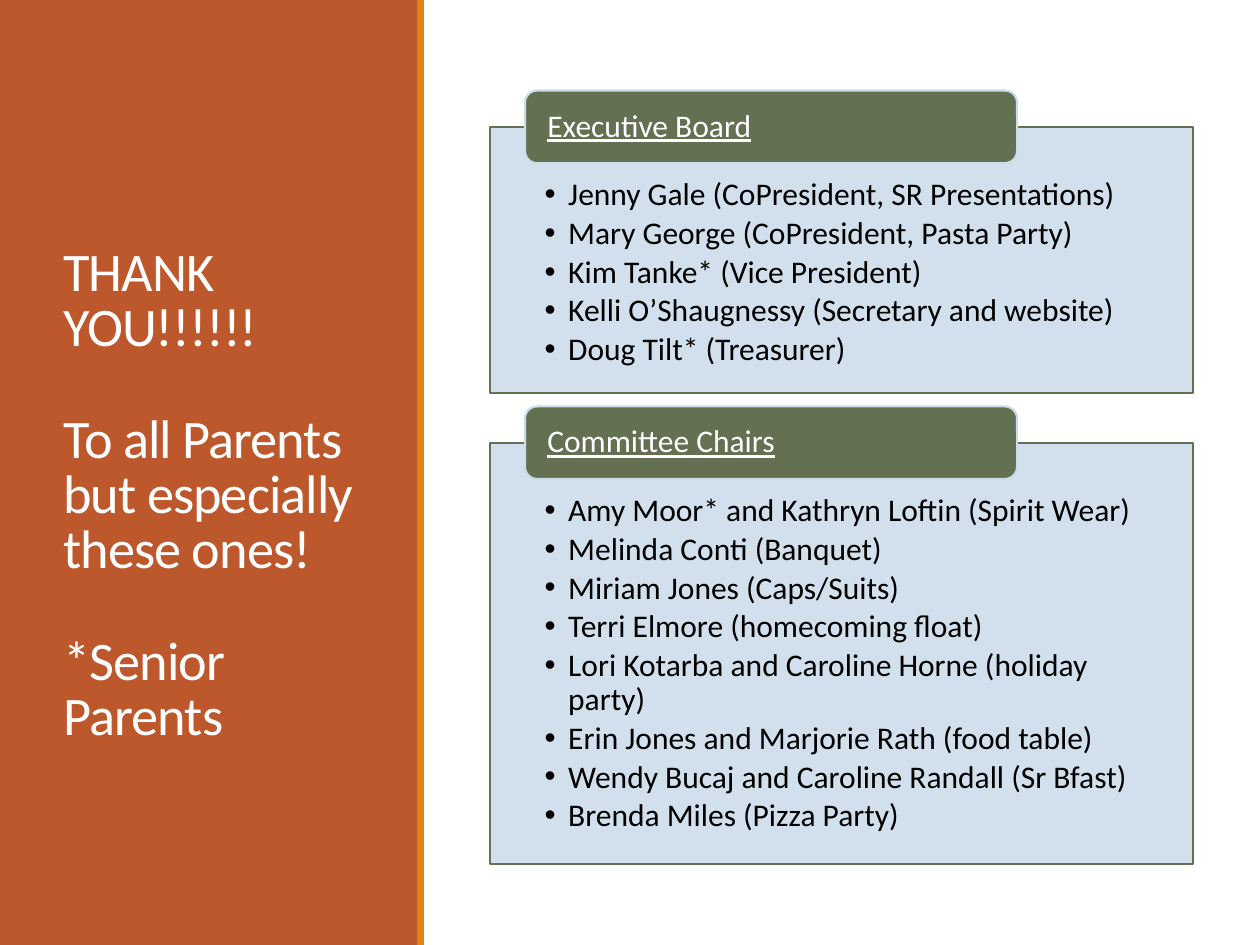
from lxml import etree
from pptx import Presentation
from pptx.dml.color import RGBColor
from pptx.enum.shapes import MSO_SHAPE
from pptx.enum.text import MSO_ANCHOR, MSO_AUTO_SIZE, PP_ALIGN
from pptx.oxml.ns import qn
from pptx.util import Pt

RECTANGLE, ROUNDED = MSO_SHAPE.RECTANGLE, MSO_SHAPE.ROUNDED_RECTANGLE
TOP, MIDDLE = MSO_ANCHOR.TOP, MSO_ANCHOR.MIDDLE
LEFT, NO_FIT = PP_ALIGN.LEFT, MSO_AUTO_SIZE.NONE

RUST, ORANGE, GREEN, BLUE = "BD582C", "E48312", "637052", "CCDDEA"
WHITE, BLACK = "FFFFFF", "000000"

MESSAGES = ["THANK YOU!!!!!!", "To all Parents but especially these ones!", "*Senior Parents"]
GROUPS = [
    ("Executive Board", 72.5, 152, [
        "Jenny Gale (CoPresident, SR Presentations)",
        "Mary George (CoPresident, Pasta Party)",
        "Kim Tanke* (Vice President)",
        "Kelli O’Shaugnessy (Secretary and website)",
        "Doug Tilt* (Treasurer)",
    ]),
    ("Committee Chairs", 253, 241, [
        "Amy Moor* and Kathryn Loftin (Spirit Wear)",
        "Melinda Conti (Banquet)",
        "Miriam Jones (Caps/Suits)",
        "Terri Elmore (homecoming float)",
        "Lori Kotarba and Caroline Horne (holiday party)",
        "Erin Jones and Marjorie Rath (food table)",
        "Wendy Bucaj and Caroline Randall (Sr Bfast)",
        "Brenda Miles (Pizza Party)",
    ]),
]


def add_block(kind, left, top, width, height, fill, line=None):
    block = page.shapes.add_shape(kind, Pt(left), Pt(top), Pt(width), Pt(height))
    block.shadow.inherit = False
    block.fill.solid()
    block.fill.fore_color.rgb = RGBColor.from_string(fill)
    if line:
        block.line.color.rgb = RGBColor.from_string(line)
        block.line.width = Pt(1.25)
    else:
        block.line.fill.background()
    return block


def write(para, text, size, color, spacing):
    para.alignment = LEFT
    para.line_spacing = spacing
    span = para.add_run()
    span.text = text
    span.font.name = "Calibri"
    span.font.size = Pt(size)
    span.font.color.rgb = RGBColor.from_string(color)
    return span


deck = Presentation()
deck.slide_width, deck.slide_height = Pt(720), Pt(540)
page = deck.slides.add_slide(deck.slide_layouts[5])

panel = add_block(RECTANGLE, 0, 0, 239, 540, RUST)
title = page.shapes.title
title.element.addprevious(panel.element)
title.left, title.top, title.width, title.height = Pt(29), Pt(41), Pt(182), Pt(454)
box = title.text_frame
box.word_wrap = True
box.auto_size = NO_FIT
box.vertical_anchor = MIDDLE
box.margin_top = Pt(35.6)
for index, message in enumerate(MESSAGES):
    para = box.add_paragraph() if index else box.paragraphs[0]
    span = write(para, message, 31, WHITE, 0.85)
    span.font._element.set("spc", "-50")
    para.space_before = Pt(32 if index else 0)

add_block(RECTANGLE, 238.5, 0, 3.75, 540, ORANGE)

for heading, top, height, members in GROUPS:
    card = add_block(RECTANGLE, 280, top, 401.75, height, BLUE, GREEN)
    color = card.fill._xPr.find(qn("a:solidFill"))[0]
    etree.SubElement(color, qn("a:alpha"), val="90000")
    box = card.text_frame
    box.word_wrap = True
    box.vertical_anchor = TOP
    box.margin_left = box.margin_right = Pt(31.2)
    box.margin_top, box.margin_bottom = Pt(29.5), Pt(10)
    for index, member in enumerate(members):
        para = box.add_paragraph() if index else box.paragraphs[0]
        properties = para._p.get_or_add_pPr()
        properties.set("marL", str(Pt(13.5)))
        properties.set("indent", str(-Pt(13.5)))
        etree.SubElement(properties, qn("a:buFont"), typeface="Arial")
        etree.SubElement(properties, qn("a:buChar"), char="•")
        write(para, member, 18, BLACK, 0.9)
        para.space_after = Pt(2.7)

    header = add_block(ROUNDED, 300, top - 20.75, 281.25, 41.5, GREEN, BLUE)
    box = header.text_frame
    box.word_wrap = True
    box.vertical_anchor = MIDDLE
    box.margin_left = box.margin_right = Pt(10.8)
    box.margin_top = box.margin_bottom = 0
    span = write(box.paragraphs[0], heading, 18, WHITE, 0.9)
    span.font.underline = True

deck.save("out.pptx")
